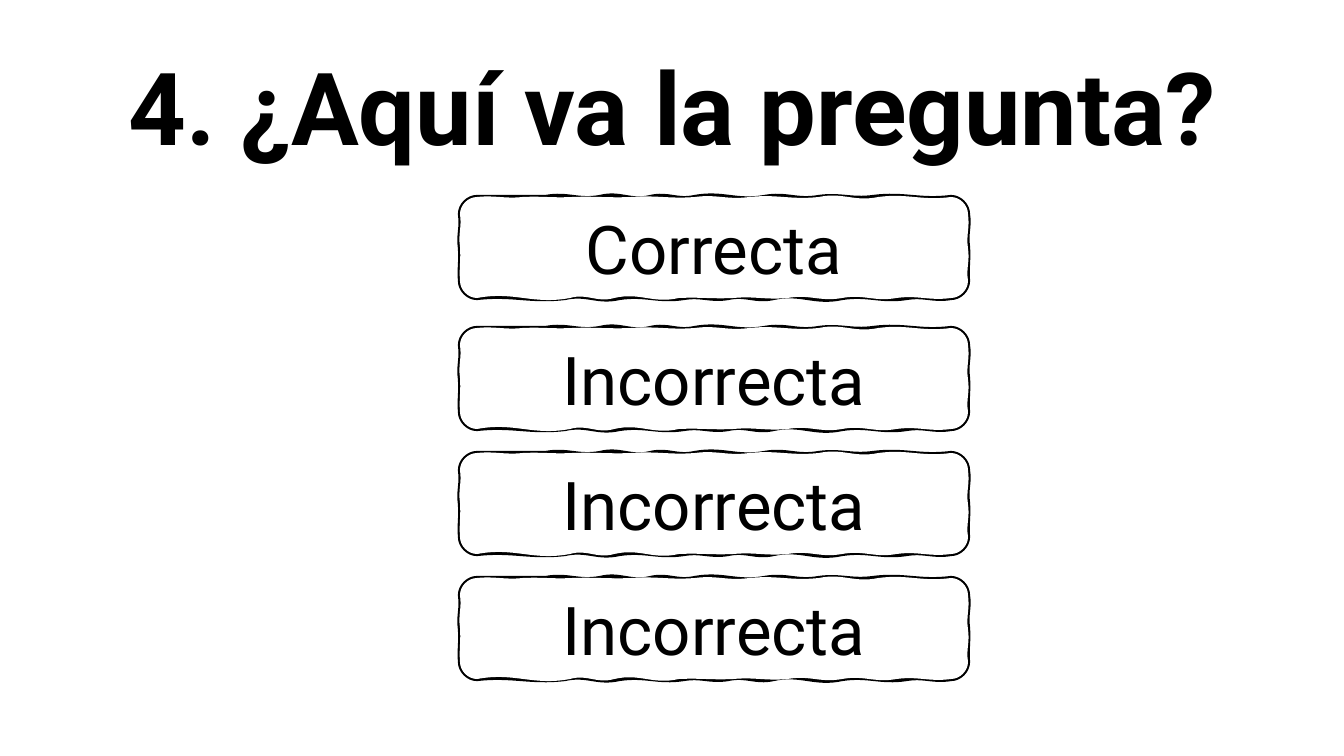
from lxml import etree
from pptx import Presentation
from pptx.dml.color import RGBColor
from pptx.enum.text import MSO_ANCHOR, PP_ALIGN
from pptx.oxml.ns import qn
from pptx.util import Pt

MIDDLE = MSO_ANCHOR.MIDDLE
CENTER = PP_ALIGN.CENTER
PX = 914400 / 100.8
COLORS = {"ink": "000000", "paper": "FFFFFF"}

# Answer boxes, in px
BOX_LEFT, BOX_WIDTH, BOX_HEIGHT = 460, 508, 101
ANSWERS = [
    (197, "Correcta"),
    (328, "Incorrecta"),
    (453, "Incorrecta"),
    (578, "Incorrecta"),
]

# Contours are drawn on their own grid, which stretches to the box
GRID_WIDTH, GRID_HEIGHT = 504, 100
CORNER_RADIUS, CORNER_PULL = 17, 9

# Each side is a row of ripples: (length, swing). A ripple swings outward at
# 0.4 of its length and inward at 0.6. The lengths fill the side between corners.
STROKE_SIDES = {
    "top": [(68, 0), (54, 4), (50, 5), (44, 4), (69, 5), (54, 4), (54, 3), (77, 4)],
    "right": [(32, 2), (34, 1)],
    "bottom": [(44, 3), (64, 4), (68, 6), (45, 4), (44, 3), (64, 4), (54, 5), (87, 4)],
    "left": [(32, 1), (34, 2)],
}
FILL_SIDES = {
    "top": [(45, 2), (49, 1), (59, 1), (63, 2), (54, 3), (69, 3), (59, 5), (72, 4)],
    "right": [(34, 2), (32, 2)],
    "bottom": [(54, 3), (54, 4), (54, 4), (54, 2), (54, 1), (64, 6), (44, 5), (92, 7)],
    "left": [(34, 1), (32, 2)],
}


def write_text(shape, text, size, bold=False, line_spacing=None):
    frame = shape.text_frame
    frame.word_wrap = True
    frame.vertical_anchor = MIDDLE
    paragraph = frame.paragraphs[0]
    paragraph.alignment = CENTER
    paragraph.line_spacing = line_spacing
    run = paragraph.add_run()
    run.text = text
    run.font.name = "Roboto"
    run.font.size = Pt(size)
    run.font.bold = bold
    run.font.color.rgb = RGBColor.from_string(COLORS["ink"])


def add_contour(path_list, sides, **paint):
    """Walk clockwise round the box: ripple along a side, then turn a corner."""
    x, y = CORNER_RADIUS, 0
    dx, dy = 1, 0
    steps = [("a:moveTo", [(x, y)])]
    for ripples in sides.values():
        for length, swing in ripples:
            # Outward, to the left of the walk, is (dy, -dx)
            outward = (x + 0.4 * length * dx + swing * dy,
                       y + 0.4 * length * dy - swing * dx)
            inward = (x + 0.6 * length * dx - swing * dy,
                      y + 0.6 * length * dy + swing * dx)
            x, y = x + length * dx, y + length * dy
            steps.append(("a:cubicBezTo", [outward, inward, (x, y)]))

        leaving = (x + CORNER_PULL * dx, y + CORNER_PULL * dy)
        x, y = x + CORNER_RADIUS * (dx - dy), y + CORNER_RADIUS * (dy + dx)
        dx, dy = -dy, dx
        arriving = (x - CORNER_PULL * dx, y - CORNER_PULL * dy)
        steps.append(("a:cubicBezTo", [leaving, arriving, (x, y)]))

    contour = etree.SubElement(path_list, qn("a:path"), w=str(GRID_WIDTH),
                               h=str(GRID_HEIGHT), **paint)
    for tag, points in steps:
        step = etree.SubElement(contour, qn(tag))
        for px, py in points:
            etree.SubElement(step, qn("a:pt"), x=str(round(px)), y=str(round(py)))
    etree.SubElement(contour, qn("a:close"))


prs = Presentation()
prs.slide_width = round(1344 * PX)
prs.slide_height = round(756 * PX)
slide = prs.slides.add_slide(prs.slide_layouts[6])

question = slide.shapes.add_textbox(*(round(n * PX) for n in (93, 40, 1159, 146)))
write_text(question, "4. ¿Aquí va la pregunta?", 72, bold=True, line_spacing=0.9)

for top, answer in ANSWERS:
    builder = slide.shapes.build_freeform(0, 0, scale=PX)
    builder.add_line_segments(
        [(BOX_WIDTH, 0), (BOX_WIDTH, BOX_HEIGHT), (0, BOX_HEIGHT)])
    box = builder.convert_to_shape(round(BOX_LEFT * PX), round(top * PX))
    box.shadow.inherit = False
    box.fill.solid()
    box.fill.fore_color.rgb = RGBColor.from_string(COLORS["paper"])
    box.line.color.rgb = RGBColor.from_string(COLORS["ink"])
    box.line.width = Pt(3)

    # The fill lies over the inner half of the stroke, giving its uneven width
    path_list = box._element.spPr.find(".//" + qn("a:pathLst"))
    path_list.remove(path_list[0])
    add_contour(path_list, STROKE_SIDES, fill="none")
    add_contour(path_list, FILL_SIDES, stroke="0")
    write_text(box, answer, 48)

prs.save("out.pptx")
